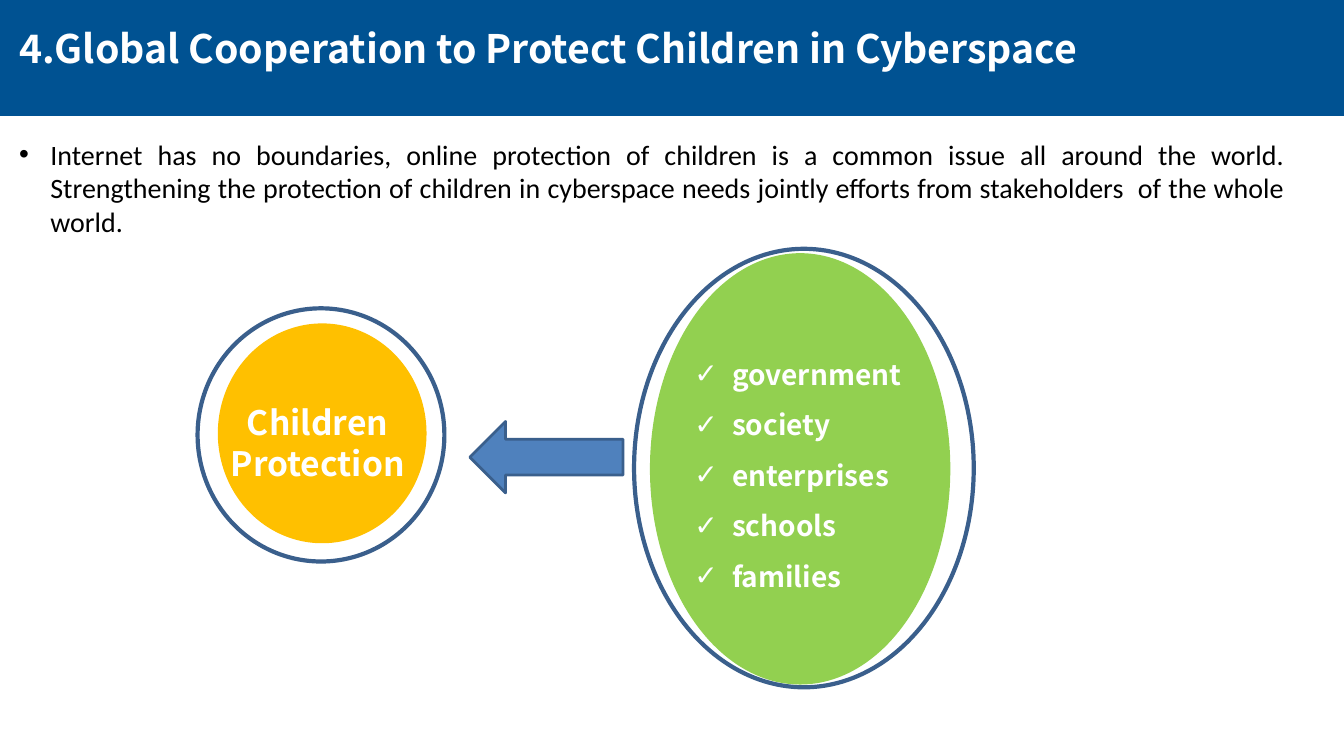
from dataclasses import dataclass

from lxml import etree
from pptx import Presentation
from pptx.dml.color import RGBColor
from pptx.enum.shapes import MSO_SHAPE
from pptx.enum.text import PP_ALIGN
from pptx.oxml.ns import qn
from pptx.util import Cm, Pt

RECTANGLE, OVAL, ARROW = MSO_SHAPE.RECTANGLE, MSO_SHAPE.OVAL, MSO_SHAPE.RIGHT_ARROW
LEFT, CENTER, JUSTIFY = PP_ALIGN.LEFT, PP_ALIGN.CENTER, PP_ALIGN.JUSTIFY


@dataclass(frozen=True)
class Theme:
    heading_font: str = "Noto Sans CJK SC"
    body_font: str = "Calibri"
    title_size: int = 28
    label_size: int = 24
    body_size: int = 20
    banner: str = "005292"
    goal: str = "FFC000"
    partners: str = "92D050"
    arrow: str = "4F81BD"
    outline: str = "3A5F8C"
    light: str = "FFFFFF"
    dark: str = "000000"


class SlideBuilder:
    def __init__(self, page, theme):
        self.page = page
        self.theme = theme

    def shape(self, kind, left, top, width, height, fill=None, line_width=None):
        """Add a preset shape; lengths in centimetres, line width in points."""
        shape = self.page.shapes.add_shape(kind, Cm(left), Cm(top), Cm(width), Cm(height))
        shape.shadow.inherit = False
        if fill:
            shape.fill.solid()
            shape.fill.fore_color.rgb = RGBColor.from_string(fill)
        else:
            shape.fill.background()
        if line_width:
            shape.line.color.rgb = RGBColor.from_string(self.theme.outline)
            shape.line.width = Pt(line_width)
        else:
            shape.line.fill.background()
        return shape

    def text(self, left, top, width, height, lines, size, color=None, font=None,
             bold=True, align=LEFT, bullet=None, indent=0, spacing=None):
        """Add a wrapping text box with one paragraph for each line."""
        box = self.page.shapes.add_textbox(Cm(left), Cm(top), Cm(width), Cm(height))
        frame = box.text_frame
        frame.word_wrap = True
        for number, line in enumerate(lines):
            para = frame.paragraphs[0] if number == 0 else frame.add_paragraph()
            para.text = line
            para.alignment = align
            if spacing:
                para.line_spacing = spacing
            if bullet:
                self.bullet(para, bullet, indent)
            para.font.name = font or self.theme.heading_font
            para.font.size = Pt(size)
            para.font.bold = bold
            para.font.color.rgb = RGBColor.from_string(color or self.theme.light)

    def bullet(self, para, mark, indent):
        """Give a paragraph a hanging bullet."""
        properties = para._p.get_or_add_pPr()
        properties.set("marL", str(Cm(indent)))
        properties.set("indent", str(-Cm(indent)))
        etree.SubElement(properties, qn("a:buFont")).set("typeface", "Arial")
        etree.SubElement(properties, qn("a:buChar")).set("char", mark)


def main():
    deck = Presentation()
    deck.slide_width, deck.slide_height = Cm(33.87), Cm(19.05)
    theme = Theme()
    slide = SlideBuilder(deck.slides.add_slide(deck.slide_layouts[6]), theme)

    # Title banner
    slide.shape(RECTANGLE, 0, 0, 33.87, 2.92, fill=theme.banner)
    slide.text(0.23, 0.5, 33.6, 1.45,
               ["4.Global Cooperation to Protect Children in Cyberspace"], theme.title_size)

    # Introduction
    slide.text(0.23, 3.33, 32.4, 2.82,
               ["Internet has no boundaries, online protection of children is a common issue "
                "all around the world. Strengthening the protection of children in cyberspace "
                "needs jointly efforts from stakeholders  of the whole world."],
               theme.body_size, color=theme.dark, font=theme.body_font, bold=False,
               align=JUSTIFY, bullet="•", indent=0.79)

    # Filled ovals with their outer rings
    slide.shape(OVAL, 5.49, 8.15, 5.26, 5.54, fill=theme.goal)
    slide.shape(OVAL, 16.38, 6.38, 7.57, 10.87, fill=theme.partners)
    slide.shape(OVAL, 4.98, 7.77, 6.22, 6.38, line_width=3)
    slide.shape(OVAL, 15.98, 6.27, 8.56, 11.05, line_width=3)

    # Partners and the goal they share
    slide.text(17.25, 8.46, 6.68, 6.65,
               ["government", "society", "enterprises", "schools", "families"],
               theme.body_size, bullet="✓", indent=0.95, spacing=1.5)
    slide.text(5.16, 10.01, 5.69, 2.31, ["Children Protection"], theme.label_size, align=CENTER)

    # Arrow from the partners to the goal
    arrow = slide.shape(ARROW, 11.84, 10.62, 3.86, 1.8, fill=theme.arrow, line_width=2)
    arrow.rotation = 180

    deck.save("out.pptx")


if __name__ == "__main__":
    main()
